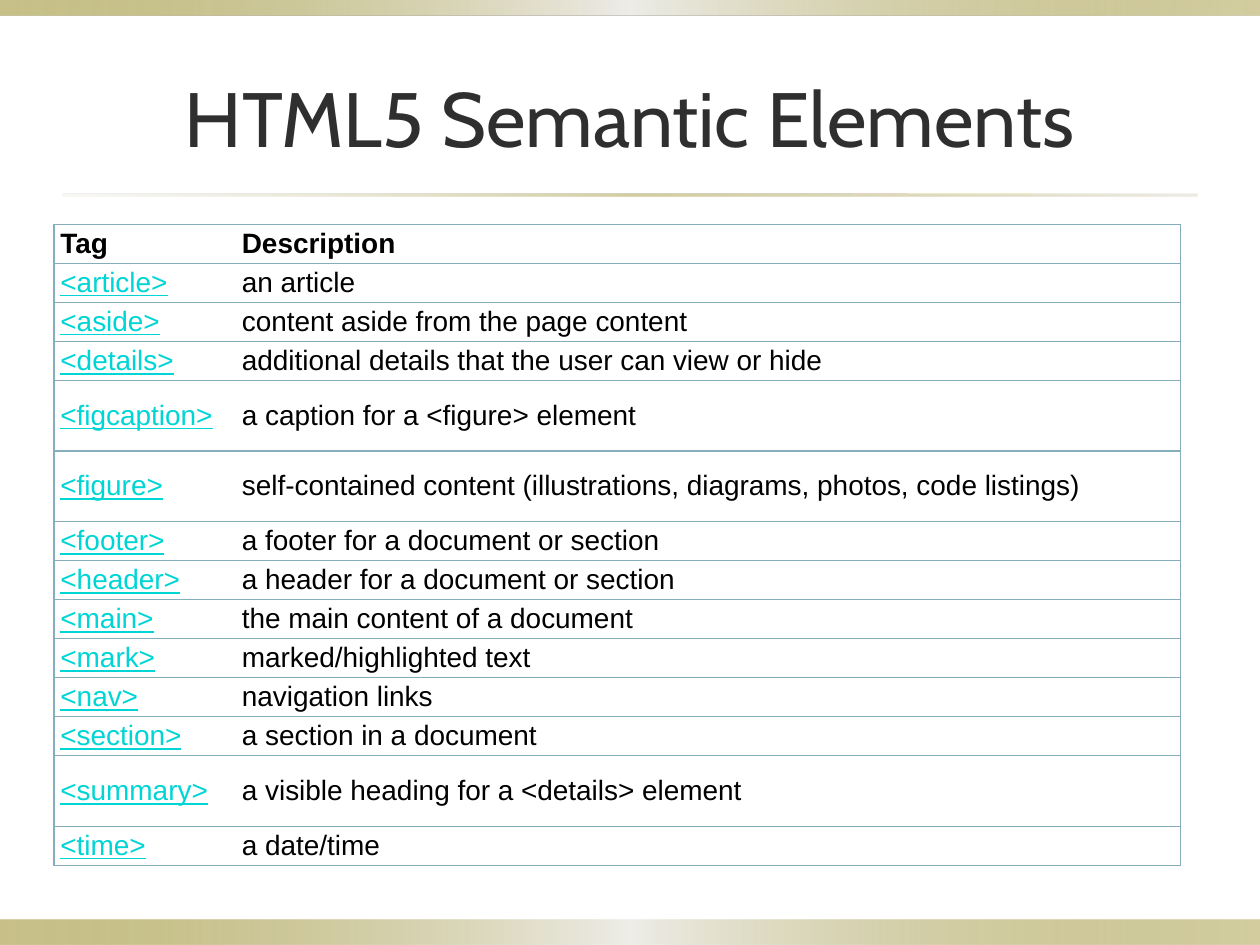
from lxml.etree import SubElement
from pptx import Presentation
from pptx.dml.color import RGBColor
from pptx.enum.shapes import MSO_SHAPE
from pptx.enum.text import MSO_ANCHOR, PP_ALIGN
from pptx.oxml.ns import qn
from pptx.util import Inches, Pt

OLIVE = RGBColor(0x91, 0x84, 0x15)
PALE = RGBColor(0xEE, 0xED, 0xE8)
SAND = RGBColor(0xDC, 0xD9, 0xCC)
CHARCOAL = RGBColor(0x2F, 0x2F, 0x2F)
BLACK = RGBColor(0x00, 0x00, 0x00)
WHITE = RGBColor(0xFF, 0xFF, 0xFF)
LINK = RGBColor(0x00, 0xD5, 0xD5)
BORDER = RGBColor(0x85, 0xAD, 0xBC)

BAND_STOPS = [(0, OLIVE, 50), (50, PALE, 100), (100, OLIVE, 40)]
RULE_STOPS = [(0, SAND, 20), (50, OLIVE, 40), (100, SAND, 50)]

TITLE_FONT = {"name": "Cabin", "size": Pt(44)}
BODY_FONT = {"name": "Arial", "size": Pt(16)}
HEADER_FONT = {**BODY_FONT, "bold": True}
TAG_FONT = {**BODY_FONT, "underline": True}
CELL_FORMAT = {
    "vertical_anchor": MSO_ANCHOR.MIDDLE,
    "margin_left": Inches(0.05),
    "margin_right": Inches(0.05),
    "margin_top": Inches(0.02),
    "margin_bottom": Inches(0.02),
}

COL_WIDTHS = [1.44, 7.5]
ROW_HEIGHT = 0.31
TALL_HEIGHT = 0.56
TALL_TAGS = {"<figcaption>", "<figure>", "<summary>"}
ELEMENTS = [
    ("Tag", "Description"),
    ("<article>", "an article"),
    ("<aside>", "content aside from the page content"),
    ("<details>", "additional details that the user can view or hide"),
    ("<figcaption>", "a caption for a <figure> element"),
    ("<figure>", "self-contained content (illustrations, diagrams, photos, code listings)"),
    ("<footer>", "a footer for a document or section"),
    ("<header>", "a header for a document or section"),
    ("<main>", "the main content of a document"),
    ("<mark>", "marked/highlighted text"),
    ("<nav>", "navigation links"),
    ("<section>", "a section in a document"),
    ("<summary>", "a visible heading for a <details> element"),
    ("<time>", "a date/time"),
]


def set_attrs(obj, values):
    for name, value in values.items():
        setattr(obj, name, value)


def add_text(p, text, font, color):
    r = p.add_run()
    r.text = text
    set_attrs(r.font, font)
    r.font.color.rgb = color


def add_gradient_bar(s, left, top, width, height, stops):
    sp = s.shapes.add_shape(MSO_SHAPE.RECTANGLE, Inches(left), Inches(top),
                            Inches(width), Inches(height))
    sp.shadow.inherit = False
    sp.line.fill.background()
    sp.fill.gradient()
    sp.fill.gradient_angle = 0
    gs_list = next(sp._element.iter(qn("a:gsLst")))
    for gs in list(gs_list):
        gs_list.remove(gs)
    for pos, color, alpha in stops:
        gs = SubElement(gs_list, qn("a:gs"), pos=str(pos * 1000))
        clr = SubElement(gs, qn("a:srgbClr"), val=str(color))
        SubElement(clr, qn("a:alpha"), val=str(alpha * 1000))


def add_title(s, text):
    sp = s.shapes.add_textbox(Inches(0.5), Inches(0.3), Inches(9), Inches(1.25))
    tf = sp.text_frame
    set_attrs(tf, {"word_wrap": True, "vertical_anchor": MSO_ANCHOR.MIDDLE})
    p = tf.paragraphs[0]
    p.alignment = PP_ALIGN.CENTER
    add_text(p, text, TITLE_FONT, CHARCOAL)


def set_borders(cell, sides):
    tc_pr = cell._tc.get_or_add_tcPr()
    for side in "LRTB":
        ln = SubElement(tc_pr, qn(f"a:ln{side}"), w=str(Pt(1)))
        if side in sides:
            fill = SubElement(ln, qn("a:solidFill"))
            SubElement(fill, qn("a:srgbClr"), val=str(BORDER))
        else:
            SubElement(ln, qn("a:noFill"))


def fill_cell(cell, text, font, color, sides):
    set_attrs(cell, CELL_FORMAT)
    set_borders(cell, sides)
    cell.fill.solid()
    cell.fill.fore_color.rgb = WHITE
    add_text(cell.text_frame.paragraphs[0], text, font, color)


def add_element_table(s, left, top):
    heights = [TALL_HEIGHT if tag in TALL_TAGS else ROW_HEIGHT for tag, _ in ELEMENTS]
    table = s.shapes.add_table(len(ELEMENTS), len(COL_WIDTHS), Inches(left), Inches(top),
                               Inches(sum(COL_WIDTHS)), Inches(sum(heights))).table
    set_attrs(table, {"first_row": False, "horz_banding": False})
    for col, width in zip(table.columns, COL_WIDTHS):
        col.width = Inches(width)
    for i, (row, height, (tag, description)) in enumerate(zip(table.rows, heights, ELEMENTS)):
        row.height = Inches(height)
        tag_font, tag_color = (TAG_FONT, LINK) if i else (HEADER_FONT, BLACK)
        fill_cell(row.cells[0], tag, tag_font, tag_color, "LTB")
        fill_cell(row.cells[1], description, BODY_FONT if i else HEADER_FONT, BLACK, "RTB")


def main():
    prs = Presentation()
    set_attrs(prs, {"slide_width": Inches(10), "slide_height": Inches(7.5)})
    s = prs.slides.add_slide(prs.slide_layouts[6])
    add_gradient_bar(s, 0, 7.3, 10, 0.2, BAND_STOPS)
    add_gradient_bar(s, 0, 0, 10, 0.12, BAND_STOPS)
    add_gradient_bar(s, 0.5, 1.54, 9, 0.02, RULE_STOPS)
    add_title(s, "HTML5 Semantic Elements")
    add_element_table(s, 0.43, 1.78)
    prs.save("out.pptx")


if __name__ == "__main__":
    main()
